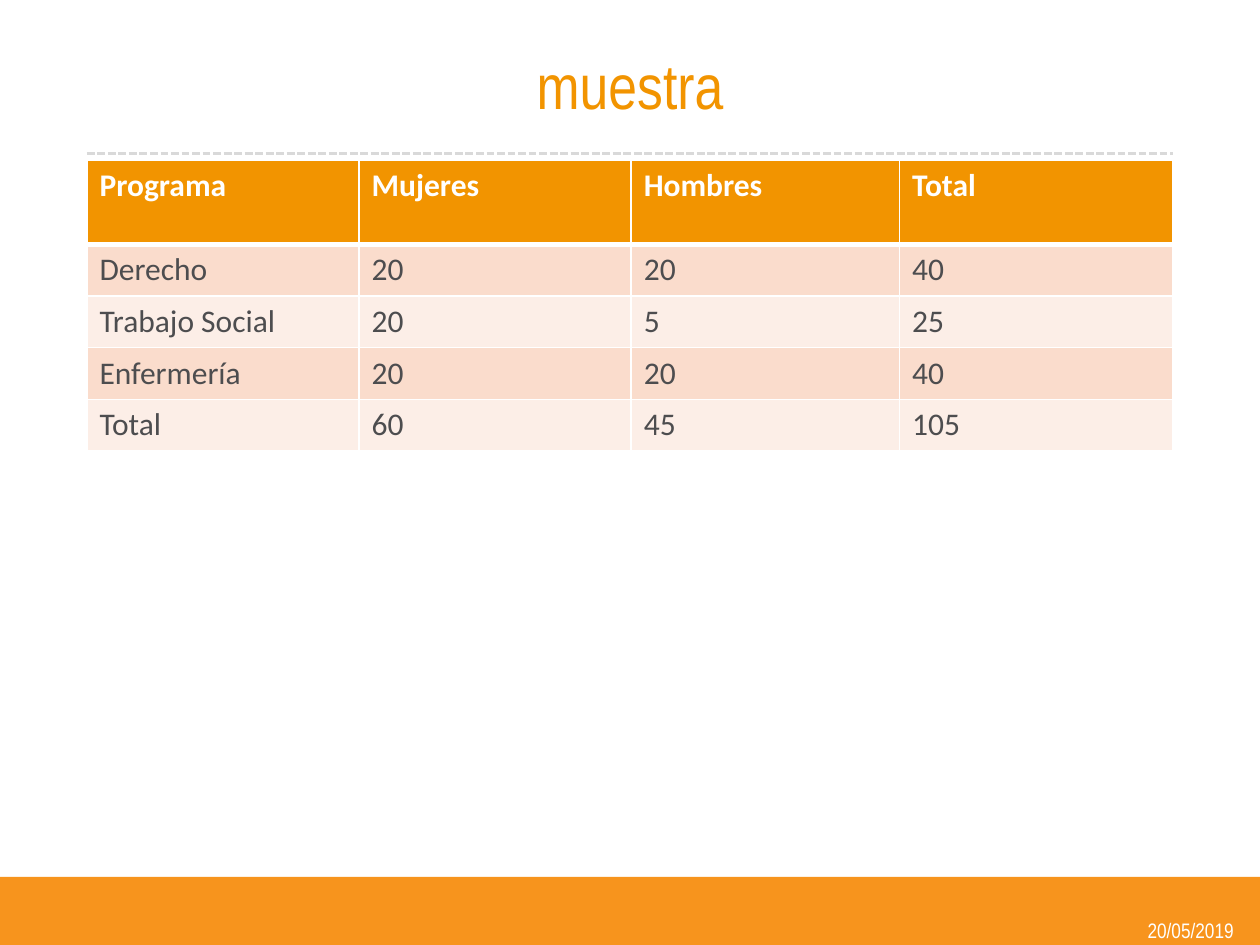
from lxml import etree
from pptx import Presentation
from pptx.dml.color import RGBColor
from pptx.enum.dml import MSO_LINE_DASH_STYLE as Dash
from pptx.enum.shapes import MSO_CONNECTOR as Connector
from pptx.enum.shapes import MSO_SHAPE as Shape
from pptx.enum.text import MSO_ANCHOR as Anchor
from pptx.enum.text import PP_ALIGN as Align
from pptx.oxml.ns import qn
from pptx.util import Inches, Pt

ORANGE = RGBColor(0xF2, 0x94, 0x00)
FOOTER_ORANGE = RGBColor(0xF7, 0x94, 0x1D)
WHITE = RGBColor(0xFF, 0xFF, 0xFF)
RULE_GRAY = RGBColor(0xD9, 0xD9, 0xD9)
TEXT_GRAY = RGBColor(0x4D, 0x4D, 0x4F)
BANDS = (RGBColor(0xFA, 0xDC, 0xCC), RGBColor(0xFC, 0xEE, 0xE7))

LEFT, WIDTH = 0.69, 8.62
COLUMN_WIDTHS = (2.16, 2.16, 2.13, 2.17)
ROW_HEIGHTS = (0.67, 0.41, 0.41, 0.41, 0.41)
SAMPLE = (
    ("Programa", "Mujeres", "Hombres", "Total"),
    ("Derecho", "20", "20", "40"),
    ("Trabajo Social", "20", "5", "25"),
    ("Enfermería", "20", "20", "40"),
    ("Total", "60", "45", "105"),
)


class SlideBuilder:
    """Draws styled elements on the current slide."""

    heading_font = "Arial Narrow"
    body_font = "Calibri"

    def __init__(self, deck):
        self.page = deck.slides.add_slide(deck.slide_layouts[5])

    def add_text(self, frame, text, size, color, font, align=Align.LEFT, bold=False):
        para = frame.paragraphs[0]
        para.alignment = align
        span = para.add_run()
        span.text = text
        span.font.size = Pt(size)
        span.font.name = font
        span.font.bold = bold
        span.font.color.rgb = color

    def title(self, text, *area):
        box = self.page.shapes.title
        box.left, box.top, box.width, box.height = map(Inches, area)
        box.text_frame.vertical_anchor = Anchor.MIDDLE
        self.add_text(box.text_frame, text, 36, ORANGE, self.heading_font, Align.CENTER)

    def band(self, color, *area):
        box = self.page.shapes.add_shape(Shape.RECTANGLE, *map(Inches, area))
        box.shadow.inherit = False
        box.fill.solid()
        box.fill.fore_color.rgb = color
        box.line.fill.background()

    def label(self, text, *area):
        box = self.page.shapes.add_textbox(*map(Inches, area))
        frame = box.text_frame
        frame.word_wrap = True
        frame.margin_left = frame.margin_right = 0
        frame.margin_top = frame.margin_bottom = 0
        frame.vertical_anchor = Anchor.MIDDLE
        self.add_text(frame, text, 12, WHITE, self.heading_font, Align.CENTER)

    def dashed_rule(self, left, top, width):
        rule = self.page.shapes.add_connector(
            Connector.STRAIGHT, Inches(left), Inches(top), Inches(left + width), Inches(top)
        )
        rule.line.color.rgb = RULE_GRAY
        rule.line.width = Pt(1.5)
        rule.line.dash_style = Dash.SQUARE_DOT
        etree.SubElement(rule._element.spPr, qn("a:effectLst"))

    def borders(self, cell, widths):
        properties = cell._tc.get_or_add_tcPr()
        for side, width in widths.items():
            line = etree.SubElement(properties, qn(f"a:ln{side}"), w=str(Pt(width)))
            fill = etree.SubElement(line, qn("a:solidFill"))
            etree.SubElement(fill, qn("a:srgbClr"), val=str(WHITE))

    def table(self, rows, left, top, column_widths, row_heights):
        table = self.page.shapes.add_table(
            len(rows), len(column_widths), Inches(left), Inches(top),
            Inches(sum(column_widths)), Inches(sum(row_heights)),
        ).table
        for column, width in zip(table.columns, column_widths):
            column.width = Inches(width)
        for index, (row, height, texts) in enumerate(zip(table.rows, row_heights, rows)):
            row.height = Inches(height)
            header = index == 0
            top_width = 3 if index == 1 else 1
            bottom_width = 3 if header else 1
            for cell, text in zip(row.cells, texts):
                self.borders(cell, {"L": 1, "R": 1, "T": top_width, "B": bottom_width})
                cell.fill.solid()
                cell.fill.fore_color.rgb = ORANGE if header else BANDS[(index - 1) % 2]
                color = WHITE if header else TEXT_GRAY
                self.add_text(cell.text_frame, text, 18, color, self.body_font, bold=header)


def main():
    deck = Presentation()
    deck.slide_width, deck.slide_height = Inches(10), Inches(7.5)
    builder = SlideBuilder(deck)
    builder.band(FOOTER_ORANGE, 0, 6.96, 10, 0.56)
    builder.label("20/05/2019", 8.92, 7.28, 1.06, 0.21)
    builder.dashed_rule(LEFT, 1.22, WIDTH)
    builder.title("muestra", LEFT, 0.13, WIDTH, 1.08)
    builder.table(SAMPLE, LEFT, 1.27, COLUMN_WIDTHS, ROW_HEIGHTS)
    deck.save("out.pptx")


if __name__ == "__main__":
    main()
